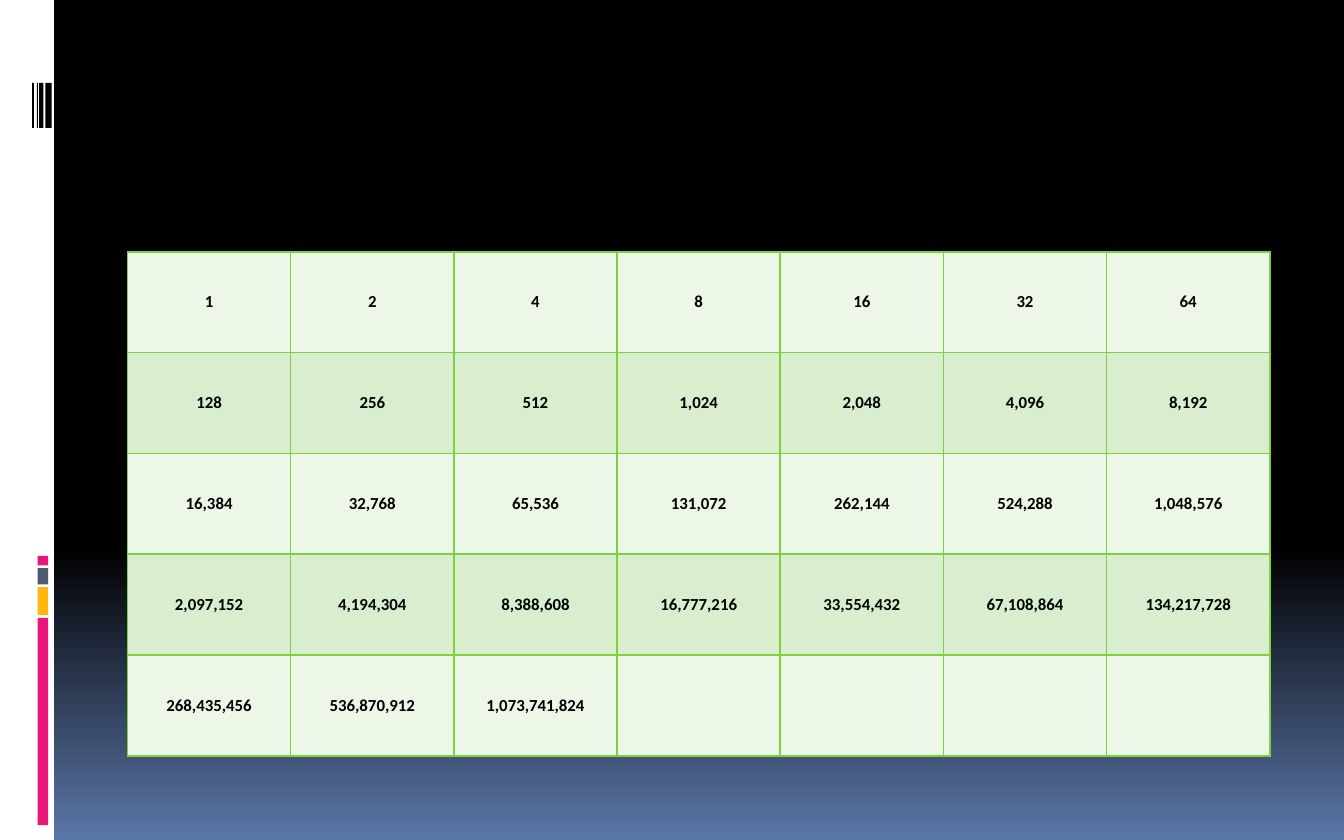
from copy import deepcopy

from lxml import etree
from pptx import Presentation
from pptx.dml.color import RGBColor
from pptx.enum.shapes import MSO_SHAPE
from pptx.enum.text import MSO_ANCHOR, PP_ALIGN
from pptx.oxml.ns import qn
from pptx.util import Cm, Pt

RECTANGLE = MSO_SHAPE.RECTANGLE
CENTER = PP_ALIGN.CENTER
MIDDLE = MSO_ANCHOR.MIDDLE

COLORS = {
    "white": "FFFFFF",
    "black": "000000",
    "blue": "5B77A8",
    "pink": "EA157A",
    "amber": "FEB80A",
    "slate": "4E5B6F",
    "grid": "7FD13B",
    "light": "ECF7E8",
    "band": "D8EECE",
}
FONT = "Calibri"
ROWS, COLUMNS = 5, 7
POWERS = [2 ** n for n in range(31)]

BACKGROUND_STOPS = [(0, "black"), (0.65, "black"), (1, "blue")]
BARCODE = [(0.61, 0.03), (0.7, 0.02), (0.74, 0.08), (0.86, 0.12)]  # left, width
STACK = [(0.18, "pink"), (0.31, "slate"), (0.53, "amber"), (3.92, "pink")]  # height, color
STACK_TOP, STACK_GAP = 10.51, 0.05


def rgb(name):
    return RGBColor.from_string(COLORS[name])


def paint_background(slide):
    fill = slide.background.fill
    fill.gradient()
    fill.gradient_angle = 270
    stop_list = slide.element.find(".//" + qn("a:gsLst"))
    stop_list.append(deepcopy(stop_list[0]))
    for stop, (position, color) in zip(fill.gradient_stops, BACKGROUND_STOPS):
        stop.position = position
        stop.color.rgb = rgb(color)


def add_block(slide, left, top, width, height, color):
    block = slide.shapes.add_shape(RECTANGLE, Cm(left), Cm(top), Cm(width), Cm(height))
    block.shadow.inherit = False
    block.fill.solid()
    block.fill.fore_color.rgb = rgb(color)
    block.line.fill.background()


def add_sidebar(slide):
    add_block(slide, 0, 0, 1.02, 15.88, "white")
    for left, width in BARCODE:
        add_block(slide, left, 1.57, width, 0.85, "black")
    top = STACK_TOP
    for height, color in STACK:
        add_block(slide, 0.71, top, 0.2, height, color)
        top += height + STACK_GAP


def set_borders(cell):
    """Put the four side lines before the fill, as the schema orders them."""
    properties = cell._tc.get_or_add_tcPr()
    for index, side in enumerate(("a:lnL", "a:lnR", "a:lnT", "a:lnB")):
        line = etree.Element(qn(side), w=str(Pt(1)))
        solid = etree.SubElement(line, qn("a:solidFill"))
        etree.SubElement(solid, qn("a:srgbClr"), val=COLORS["grid"])
        properties.insert(index, line)


def write_number(cell, number):
    paragraph = cell.text_frame.paragraphs[0]
    paragraph.alignment = CENTER
    run = paragraph.add_run()
    run.text = f"{number:,}"
    run.font.name = FONT
    run.font.size = Pt(9)
    run.font.bold = True
    run.font.color.rgb = rgb("black")


def add_powers_table(slide):
    table = slide.shapes.add_table(
        ROWS, COLUMNS, Cm(2.41), Cm(4.76), Cm(21.59), Cm(9.53)
    ).table
    table.first_row = False
    table.horz_banding = False
    for index, cell in enumerate(table.iter_cells()):
        cell.vertical_anchor = MIDDLE
        cell.margin_left = cell.margin_right = Cm(0.25)
        cell.margin_top = cell.margin_bottom = Cm(0.1)
        cell.fill.solid()
        cell.fill.fore_color.rgb = rgb("band" if index // COLUMNS % 2 else "light")
        set_borders(cell)
        if index < len(POWERS):
            write_number(cell, POWERS[index])


def main():
    presentation = Presentation()
    presentation.slide_width = Cm(25.4)
    presentation.slide_height = Cm(15.88)
    slide = presentation.slides.add_slide(presentation.slide_layouts[6])
    paint_background(slide)
    add_sidebar(slide)
    add_powers_table(slide)
    presentation.save("out.pptx")


if __name__ == "__main__":
    main()
